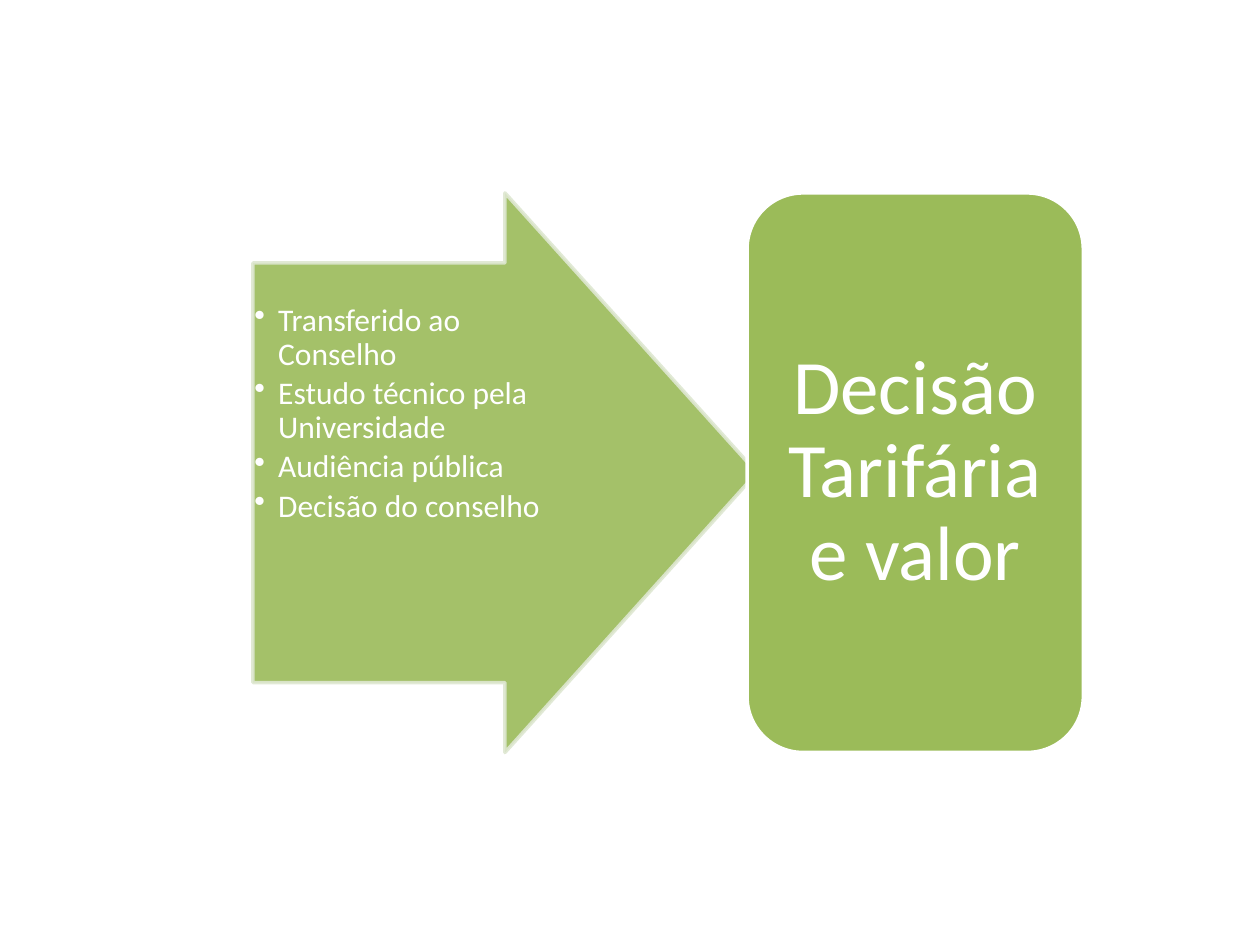
from lxml import etree
from pptx import Presentation
from pptx import util as u
from pptx.dml import color
from pptx.enum import shapes, text
from pptx.oxml import ns

COLORS = {"green": "9BBB59", "pale": "DEE7D1", "white": "FFFFFF"}
STEPS = [
    "Transferido ao Conselho",
    "Estudo técnico pela Universidade",
    "Audiência pública",
    "Decisão do conselho",
]


def apply(target, formats):
    """Set each attribute named in formats on the target."""
    for name, value in formats.items():
        setattr(target, name, value)


def rgb(name):
    """Return the palette colour of that name."""
    return color.RGBColor.from_string(COLORS[name])


def set_alpha(fill, percent):
    """Make a solid fill partly transparent."""
    srgb = fill._xPr.find(".//" + ns.qn("a:srgbClr"))
    etree.SubElement(srgb, ns.qn("a:alpha"), val=str(percent * 1000))


def add_block(slide, kind, box, outline, adjustments=()):
    """Add a green preset shape with a coloured outline."""
    block = slide.shapes.add_shape(kind, *map(u.Cm, box))
    block.shadow.inherit = False
    for index, value in enumerate(adjustments):
        block.adjustments[index] = value
    block.fill.solid()
    block.fill.fore_color.rgb = rgb("green")
    block.line.width = u.Pt(2)
    block.line.color.rgb = rgb(outline)
    return block


def add_label(slide, box, lines, size, frame_format, line_format, bullet_indent=None):
    """Add white wrapped text, bulleted when an indent is given."""
    frame = slide.shapes.add_textbox(*map(u.Cm, box)).text_frame
    apply(frame, {"word_wrap": True, **frame_format})
    for index, line in enumerate(lines):
        paragraph = frame.paragraphs[0] if index == 0 else frame.add_paragraph()
        paragraph.text = line
        apply(paragraph, {"line_spacing": 0.9, **line_format})
        if bullet_indent:
            properties = paragraph._p.get_or_add_pPr()
            properties.set("marL", str(u.Cm(bullet_indent)))
            properties.set("indent", str(-u.Cm(bullet_indent)))
            etree.SubElement(properties, ns.qn("a:buChar"), char="•")
        font = paragraph.runs[0].font
        apply(font, {"name": "Calibri", "size": u.Pt(size)})
        font.color.rgb = rgb("white")


def add_process_arrow(slide, left, top, width, height):
    """Draw the arrow holding the steps of the process."""
    arrow = add_block(slide, shapes.MSO_SHAPE.RIGHT_ARROW,
                      (left, top, width, height), "pale", (0.75, 0.5))
    for fill in (arrow.fill, arrow.line.fill):
        set_alpha(fill, 90)
    add_label(
        slide, (left, top + height / 8, width * 0.625, height * 0.75), STEPS, 18,
        {"margin_left": u.Cm(0.03), "margin_right": u.Cm(0.03),
         "margin_top": u.Cm(0.83), "margin_bottom": u.Cm(0.03),
         "vertical_anchor": text.MSO_ANCHOR.TOP},
        {"space_after": u.Pt(3), "alignment": text.PP_ALIGN.LEFT},
        bullet_indent=0.48)


def add_decision_card(slide, left, top, width, height):
    """Draw the rounded card naming the outcome."""
    add_block(slide, shapes.MSO_SHAPE.ROUNDED_RECTANGLE,
              (left, top, width, height), "white")
    inset = 0.33
    add_label(
        slide, (left + inset, top + inset, width - 2 * inset, height - 2 * inset),
        ["Decisão Tarifária e valor"], 44,
        {"margin_left": u.Cm(0.46), "margin_right": u.Cm(0.46),
         "margin_top": u.Cm(0.23), "margin_bottom": u.Cm(0.23),
         "vertical_anchor": text.MSO_ANCHOR.MIDDLE},
        {"alignment": text.PP_ALIGN.CENTER})


def main():
    """Build and save the slide."""
    deck = Presentation()
    apply(deck, {"slide_width": u.Cm(25.4), "slide_height": u.Cm(19.05)})
    slide = deck.slides.add_slide(deck.slide_layouts[6])
    top, height = 3.89, 11.28
    add_process_arrow(slide, 5.1, top, 10.16, height)
    add_decision_card(slide, 15.06, top, 6.78, height)
    deck.save("out.pptx")


if __name__ == "__main__":
    main()
